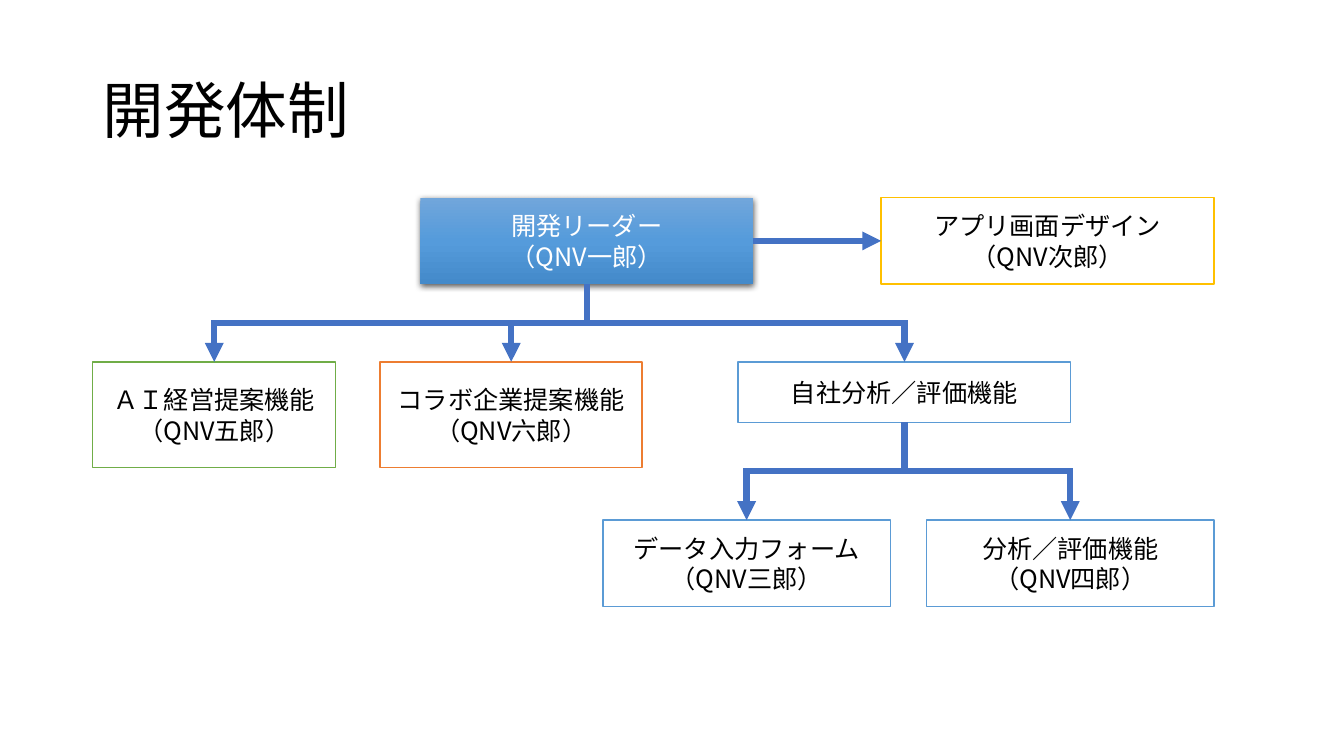
import copy
import pptx
import pptx.util
import pptx.dml.color
import pptx.enum.shapes
import pptx.enum.text
import pptx.oxml
import pptx.oxml.ns

Inches = pptx.util.Inches
Align = pptx.enum.text.PP_ALIGN
Link = pptx.enum.shapes.MSO_CONNECTOR
qn = pptx.oxml.ns.qn
NS = pptx.oxml.ns.nsdecls("a")
FONT = "Noto Sans CJK JP"


def rgb(code):
    return pptx.dml.color.RGBColor.from_string(code)


def write(shape, text, size=18, color="000000", align=Align.CENTER, gap=1.0):
    frame = shape.text_frame
    frame.word_wrap = True
    frame.vertical_anchor = pptx.enum.text.MSO_ANCHOR.MIDDLE
    para = frame.paragraphs[0]
    para.text = text
    para.alignment = align
    para.line_spacing = gap
    for run in para.runs:
        run.font.size = pptx.util.Pt(size)
        run.font.name = FONT
        run.font.color.rgb = rgb(color)
        east = pptx.oxml.parse_xml(f'<a:ea {NS} typeface="{FONT}"/>')
        run.font._element.find(qn("a:latin")).addnext(east)


deck = pptx.Presentation()
deck.slide_width = Inches(13.33)
deck.slide_height = Inches(7.5)
slide = deck.slides.add_slide(deck.slide_layouts[6])
shapes = slide.shapes

# Title
title = shapes.add_textbox(Inches(0.92), Inches(0.4), Inches(11.5), Inches(1.45))
write(title, "開発体制", size=44, align=Align.LEFT, gap=0.9)

# Team boxes: left, top, width, height, border, text
teams = {
    "lead": (4.17, 1.96, 3.3, 0.86, None, "開発リーダー\n（QNV一郎）"),
    "design": (8.74, 1.96, 3.3, 0.86, "FFC000", "アプリ画面デザイン\n（QNV次郎）"),
    "advice": (0.92, 3.59, 2.41, 1.05, "70AD47", "ＡＩ経営提案機能\n（QNV五郎）"),
    "collab": (3.77, 3.59, 2.6, 1.05, "ED7D31", "コラボ企業提案機能\n（QNV六郎）"),
    "review": (7.32, 3.59, 3.3, 0.6, "5B9BD5", "自社分析／評価機能"),
    "form": (5.98, 5.16, 2.85, 0.86, "5B9BD5", "データ入力フォーム\n（QNV三郎）"),
    "score": (9.19, 5.16, 2.85, 0.86, "5B9BD5", "分析／評価機能\n（QNV四郎）"),
}
boxes = {}
for name, (left, top, width, height, edge, text) in teams.items():
    box = shapes.add_shape(pptx.enum.shapes.MSO_SHAPE.RECTANGLE,
                           Inches(left), Inches(top), Inches(width), Inches(height))
    box.shadow.inherit = False
    if edge:
        box.fill.solid()
        box.fill.fore_color.rgb = rgb("FFFFFF")
        box.line.color.rgb = rgb(edge)
        box.line.width = pptx.util.Pt(1)
    else:
        box.line.fill.background()
    write(box, text, color="000000" if edge else "FFFFFF")
    boxes[name] = box

# Gradient and shadow of the leader box
lead = boxes["lead"]
lead.fill.gradient()
lead.fill.gradient_angle = 270
stops = lead._element.spPr.find(qn("a:gradFill")).find(qn("a:gsLst"))
stops.append(copy.deepcopy(stops[-1]))
for stop, place, code in zip(lead.fill.gradient_stops, (0, 0.5, 1),
                             ("71A6DB", "559BDB", "448ACA")):
    stop.position = place
    stop.color.rgb = rgb(code)
lead._element.spPr.find(qn("a:effectLst")).append(pptx.oxml.parse_xml(
    f'<a:outerShdw {NS} blurRad="57150" dist="19050" dir="5400000" algn="ctr" rotWithShape="0">'
    '<a:srgbClr val="000000"><a:alpha val="63000"/></a:srgbClr></a:outerShdw>'))

# Arrows: from, to, side left, side entered
arrows = [
    ("review", "form", 2, 0),
    ("review", "score", 2, 0),
    ("lead", "design", 3, 1),
    ("lead", "advice", 2, 0),
    ("lead", "collab", 2, 0),
    ("lead", "review", 2, 0),
]
for start, goal, leave, enter in arrows:
    kind = Link.ELBOW if leave == 2 else Link.STRAIGHT
    arrow = shapes.add_connector(kind, 0, 0, 0, 0)
    arrow.begin_connect(boxes[start], leave)
    arrow.end_connect(boxes[goal], enter)
    arrow.line.color.rgb = rgb("4472C4")
    arrow.line.width = pptx.util.Pt(4.5)
    for part in ('miter {} lim="800000"', 'tailEnd {} type="triangle"'):
        arrow.line._get_or_add_ln().append(
            pptx.oxml.parse_xml(f"<a:{part.format(NS)}/>"))
    props = arrow._element.spPr
    props.append(pptx.oxml.parse_xml(f"<a:effectLst {NS}/>"))
    if kind == Link.ELBOW:
        # Turn the elbow so that it leaves downwards
        run = arrow.end_x - arrow.begin_x
        drop = arrow.end_y - arrow.begin_y
        mid_x = (arrow.begin_x + arrow.end_x) // 2
        mid_y = (arrow.begin_y + arrow.end_y) // 2
        arrow.width, arrow.height = drop, abs(run)
        arrow.left, arrow.top = mid_x - drop // 2, mid_y - abs(run) // 2
        turn = props.find(qn("a:xfrm"))
        turn.set("rot", "16200000" if run > 0 else "5400000")
        turn.set("flipH", "1" if run > 0 else "0")
        turn.set("flipV", "0")

deck.save("out.pptx")
